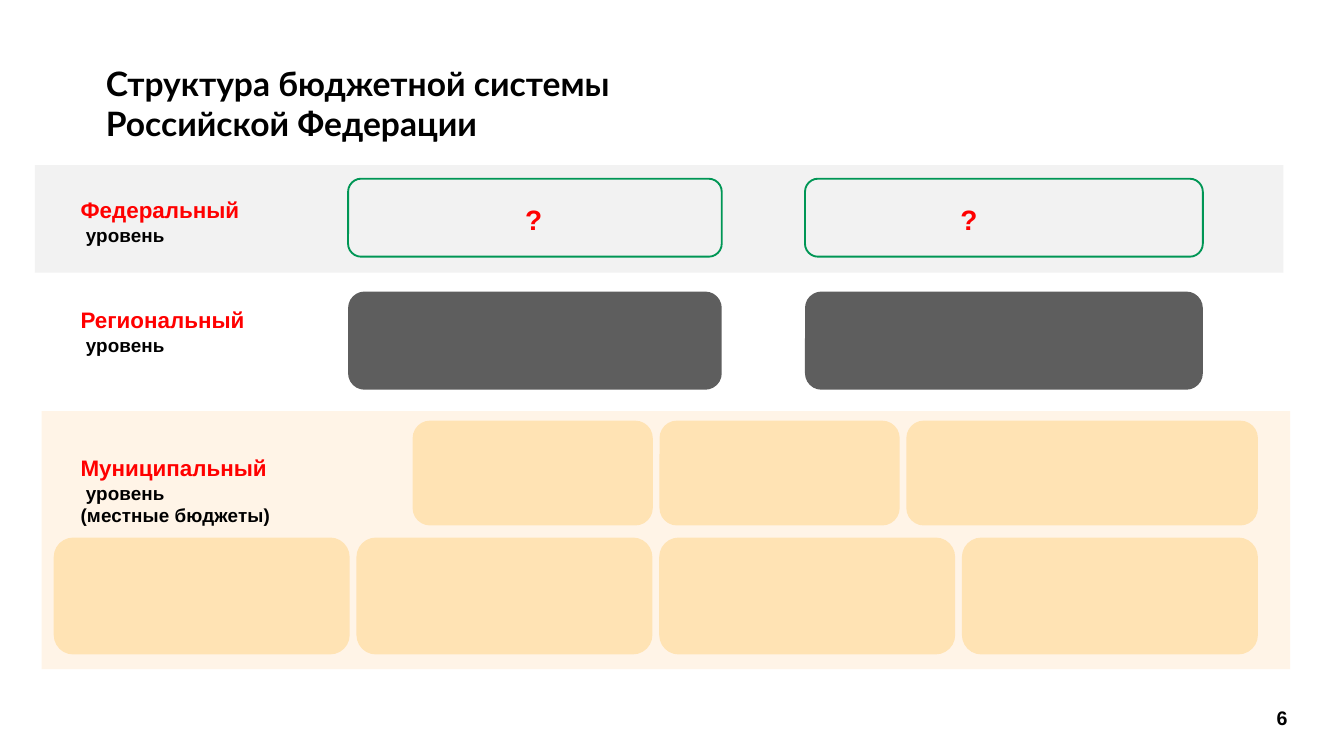
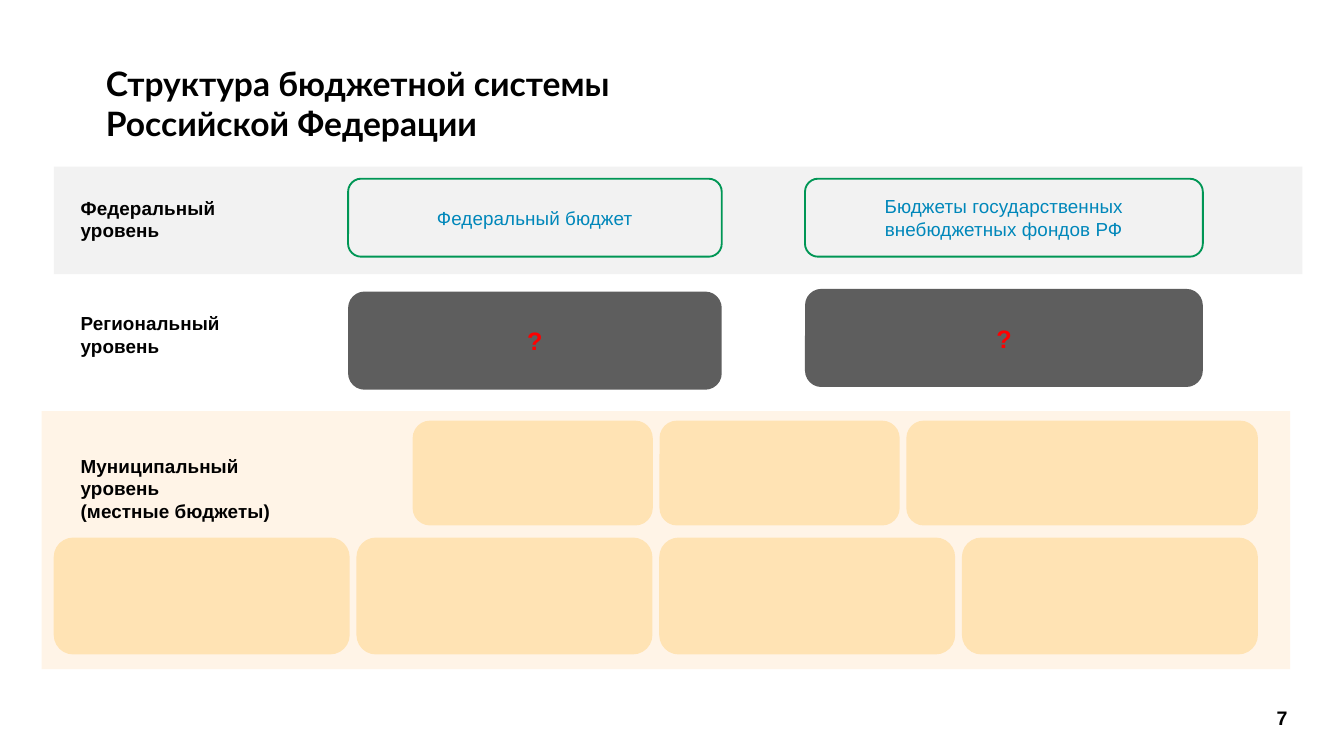
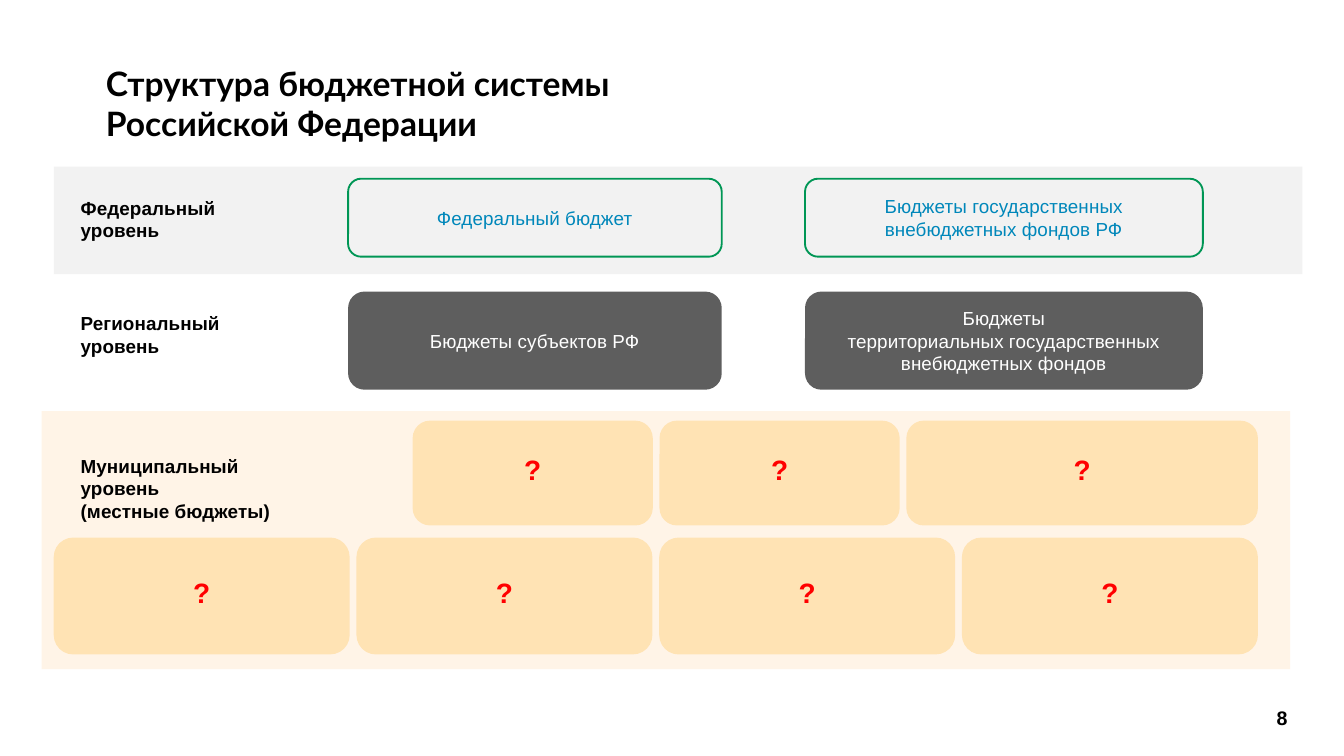
from copy import deepcopy
from lxml.etree import SubElement
from pptx import Presentation
from pptx.dml.color import RGBColor
from pptx.enum.shapes import MSO_SHAPE
from pptx.enum.text import MSO_ANCHOR, PP_ALIGN
from pptx.oxml.ns import qn
from pptx.util import Inches, Pt

BLACK, WHITE = RGBColor(0, 0, 0), RGBColor(255, 255, 255)
RED, BLUE = RGBColor(255, 0, 0), RGBColor(0, 0x87, 0xBA)
GREEN, GREY = RGBColor(0, 0x96, 0x55), RGBColor(0x5E, 0x5E, 0x5E)
PALE, CREAM = RGBColor(0xF2, 0xF2, 0xF2), RGBColor(0xFF, 0xF4, 0xE7)
SAND = RGBColor(0xFF, 0xE3, 0xB4)

# Content
TITLE = "Структура бюджетной системы \vРоссийской Федерации"
ASK = [["Федеральный", " уровень"], ["Региональный", " уровень"],
       ["Муниципальный", " уровень \v(местные бюджеты)"]]
PLAIN = [["Федеральный уровень"], ["Региональный уровень"],
         ["Муниципальный уровень \v(местные бюджеты)"]]
FED = ["Федеральный бюджет", "Бюджеты государственных внебюджетных фондов РФ"]
REG = ["Бюджеты субъектов РФ",
       "Бюджеты\vтерриториальных государственных внебюджетных фондов"]
NONE, MARKS = ["", ""], ["?", "?"]
SLIDES = [
    dict(num=6, names=ASK, tops=(1.42, 2.24, 3.34), band=(0.26, 1.23),
         hint="\t?\t?", fed=NONE, reg=NONE, town=""),
    dict(num=7, names=PLAIN, tops=(1.42, 2.28, 3.34), band=(0.4, 1.24),
         fed=FED, reg=MARKS, lift=0.02, town=""),
    dict(num=8, names=PLAIN, tops=(1.42, 2.28, 3.34), band=(0.4, 1.24),
         fed=FED, reg=REG, town="?"),
]

# Grid: left, right, gap, column shares
WIDE = (2.59, 8.95, 0.62, (2.78, 2.96))
UPPER = (3.07, 9.36, 0.05, (1.79, 1.79, 2.62))
LOWER = (0.4, 9.36, 0.05, (1, 1, 1, 1))
BAND = 9.29
TABS = (3.64, 6.88)
INSET = (0.07, 0.04)
SMALL = 10.13


def split(left, right, gap, shares):
    """Give the left edge and width of each column."""
    room = right - left - gap * (len(shares) - 1)
    for share in shares:
        width = room * share / sum(shares)
        yield left, width
        left += width + gap


def write(shape, lines, size=SMALL, color=BLACK, bold=True, face="Arial",
          align=PP_ALIGN.LEFT, anchor=MSO_ANCHOR.TOP, inset=INSET,
          space=None, lead=None, tabs=()):
    """Fill a shape with text; lead is the size and colour of line one."""
    frame = shape.text_frame
    frame.word_wrap, frame.vertical_anchor = True, anchor
    frame.margin_left = frame.margin_right = Inches(inset[0])
    frame.margin_top = frame.margin_bottom = Inches(inset[1])
    for i, line in enumerate(lines):
        para = frame.add_paragraph() if i else frame.paragraphs[0]
        para.text, para.alignment = line, align
        if tabs:
            stops = SubElement(para._p.get_or_add_pPr(), qn("a:tabLst"))
            for tab in tabs:
                SubElement(stops, qn("a:tab"), pos=str(Inches(tab)), algn="ctr")
        if space:
            para.line_spacing = space
        points, ink = lead if lead and i == 0 else (size, color)
        for run in para.runs:
            font = run.font
            font.name, font.size, font.bold = face, Pt(points), bold
            font.color.rgb = ink
        # Line breaks take the format of the text around them
        for cut in para._p.findall(qn("a:br")):
            cut.insert(0, deepcopy(para.runs[0]._r.rPr))


def block(slide, x, y, w, h, fill=None, line=None, kind=MSO_SHAPE.RECTANGLE):
    shape = slide.shapes.add_shape(kind, *map(Inches, (x, y, w, h)))
    shape.shadow.inherit = False
    if fill is None:
        shape.fill.background()
    else:
        shape.fill.solid()
        shape.fill.fore_color.rgb = fill
    if line is None:
        shape.line.fill.background()
    else:
        shape.line.color.rgb, shape.line.width = line, Pt(1)
    return shape


def label(slide, x, y, w, h, lines, **style):
    box = slide.shapes.add_textbox(*map(Inches, (x, y, w, h)))
    write(box, lines, **style)


def cards(slide, grid, y, h, texts, ink=BLACK, size=15, space=None,
          drop=0, **look):
    """Draw a row of rounded cards; a question mark is red and bold."""
    for i, ((x, w), text) in enumerate(zip(split(*grid), texts)):
        top = y - drop if i else y
        card = block(slide, x, top, w, h, kind=MSO_SHAPE.ROUNDED_RECTANGLE, **look)
        card.adjustments[0] = 0.167
        if text:
            ask = text == "?"
            write(card, [text], size=size if ask else SMALL, bold=ask,
                  color=RED if ask else ink, space=space,
                  align=PP_ALIGN.CENTER, anchor=MSO_ANCHOR.MIDDLE)


def build(slide, num, names, tops, band, fed, reg, town, hint="", lift=0):
    # Bands
    block(slide, 0.31, 3.06, BAND, 1.92, CREAM)
    strip = block(slide, *band, BAND, 0.8, PALE)
    if hint:
        write(strip, [hint], size=15, color=RED, tabs=TABS,
              anchor=MSO_ANCHOR.MIDDLE)
    # Level names
    for lines, top in zip(names, tops):
        label(slide, 0.53, top, 1.65, 0.59 if top > 3 else 0.42, lines,
              lead=(12, RED) if len(lines) > 1 else None)
    # Budgets
    cards(slide, WIDE, 1.33, 0.58, fed, BLUE, line=GREEN)
    cards(slide, WIDE, 2.17, 0.73, reg, WHITE, 13.5, drop=lift, fill=GREY)
    for grid, y, h in ((UPPER, 3.13, 0.78), (LOWER, 4, 0.87)):
        cards(slide, grid, y, h, [town] * len(grid[3]), space=0.73, fill=SAND)
    # Title and number
    label(slide, 0.69, 0.42, 7.53, 0.75, [TITLE], size=18, face="Lato",
          inset=(0.1, 0.05))
    label(slide, 9.14, 5.19, 0.8, 0.3, [str(num)], size=10.5,
          align=PP_ALIGN.CENTER, anchor=MSO_ANCHOR.MIDDLE, inset=(0.06, 0.06))


def main():
    deck = Presentation()
    deck.slide_width = Inches(10)
    deck.slide_height = deck.slide_width * 9 // 16
    for data in SLIDES:
        build(deck.slides.add_slide(deck.slide_layouts[6]), **data)
    deck.save("out.pptx")


if __name__ == "__main__":
    main()
